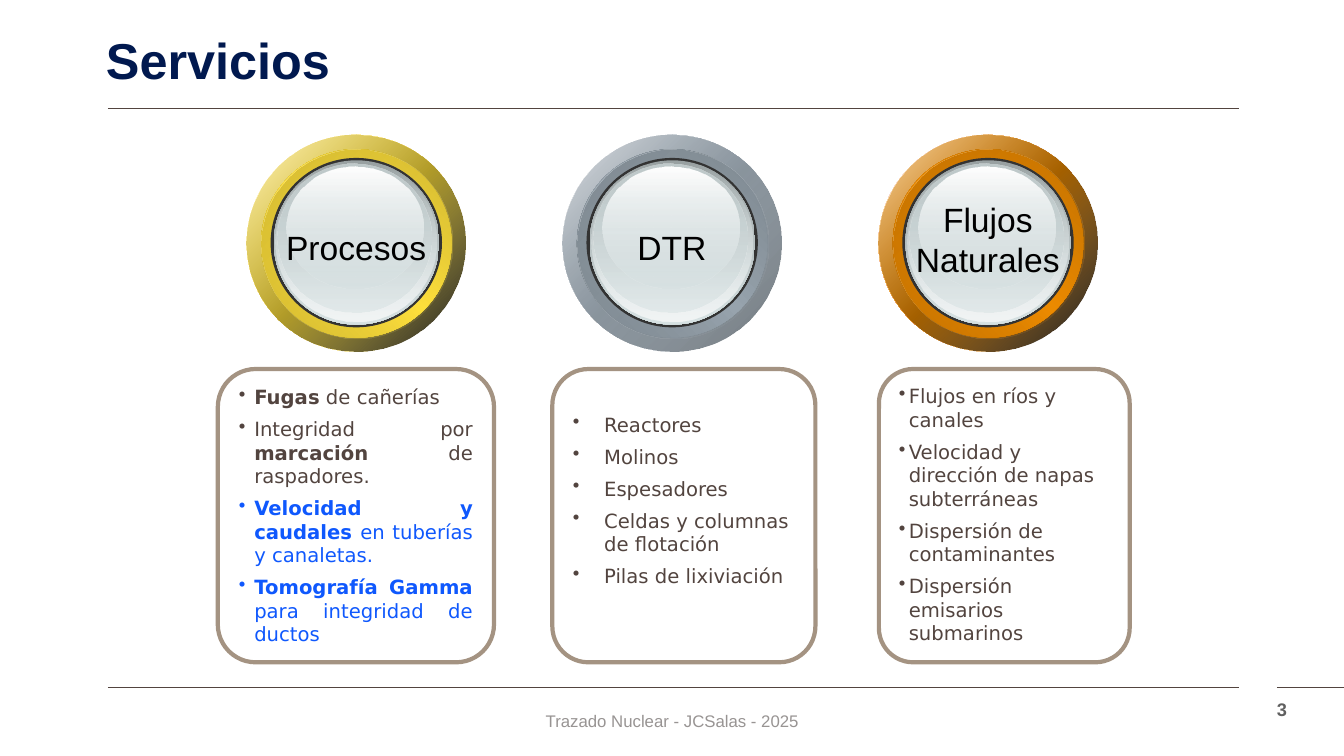
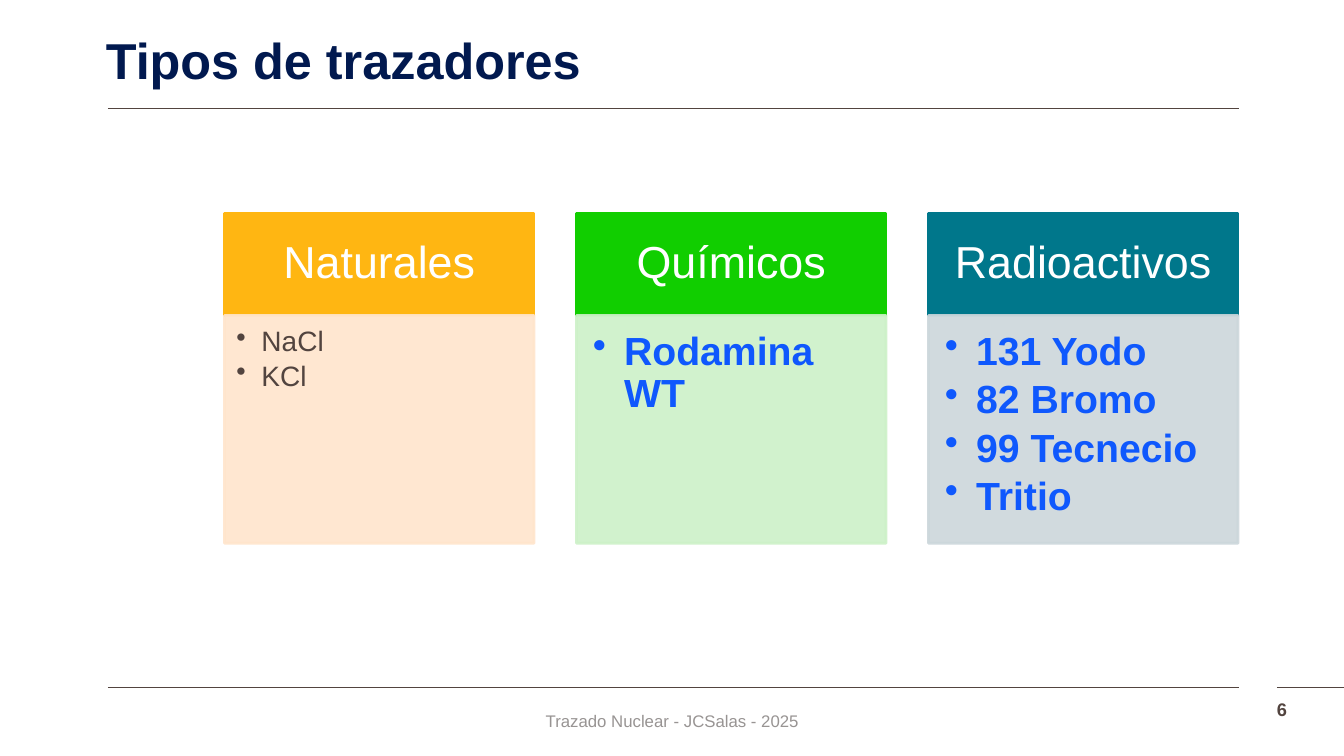
from typing import NamedTuple

from lxml import etree
from pptx import Presentation
from pptx.dml.color import RGBColor
from pptx.enum.shapes import MSO_CONNECTOR, MSO_SHAPE
from pptx.enum.text import MSO_ANCHOR, MSO_AUTO_SIZE, PP_ALIGN
from pptx.oxml.ns import qn
from pptx.util import Cm, Pt

STRAIGHT = MSO_CONNECTOR.STRAIGHT
ELLIPSE, RECTANGLE = MSO_SHAPE.OVAL, MSO_SHAPE.RECTANGLE
ROUNDED = MSO_SHAPE.ROUNDED_RECTANGLE
LEFT, CENTER, JUSTIFY = PP_ALIGN.LEFT, PP_ALIGN.CENTER, PP_ALIGN.JUSTIFY
TOP, MIDDLE = MSO_ANCHOR.TOP, MSO_ANCHOR.MIDDLE

NAVY = RGBColor(0x01, 0x19, 0x4F)
BROWN = RGBColor(0x52, 0x44, 0x3F)
GRAY = RGBColor(0x60, 0x60, 0x60)
FOOTER_GRAY = RGBColor(0x98, 0x94, 0x93)
BLUE = RGBColor(0x0F, 0x58, 0xFD)
TAUPE = RGBColor(0xA4, 0x93, 0x82)
CHARCOAL = RGBColor(0x33, 0x33, 0x33)
BLACK = RGBColor(0, 0, 0)
WHITE = RGBColor(0xFF, 0xFF, 0xFF)
AMBER, PEACH = RGBColor(0xFF, 0xB6, 0x12), RGBColor(0xFF, 0xE5, 0xCC)
GREEN, MINT = RGBColor(0x11, 0xCE, 0x00), RGBColor(0xCD, 0xF1, 0xC8)
TEAL, MIST = RGBColor(0x00, 0x77, 0x8B), RGBColor(0xCC, 0xD7, 0xDB)
GLASS = RGBColor(0xD6, 0xE1, 0xE2)
GLASS_EDGE = RGBColor(0x99, 0xA1, 0xA2)
GLASS_GLOW = RGBColor(0xF2, 0xF5, 0xF5)
GLASS_SHADE = RGBColor(0xC1, 0xCB, 0xCC)

SANS, LIST_FONT = "Arial", "DejaVu Sans"
NO_INSETS = (0, 0, 0, 0)
DEFAULT_INSETS = (0.25, 0.13, 0.25, 0.13)


class Metal(NamedTuple):
    base: RGBColor
    edge: RGBColor
    inner: RGBColor
    shadow: RGBColor
    shadow_alpha: int


GOLD = Metal(RGBColor(0xFF, 0xE0, 0x3C), RGBColor(0xC3, 0xAC, 0x2E),
             RGBColor(0xD1, 0xB8, 0x31), BLACK, 90)
SILVER = Metal(RGBColor(0x98, 0xA4, 0xAE), RGBColor(0x74, 0x7E, 0x85),
               RGBColor(0x7D, 0x87, 0x8F), RGBColor(0x6D, 0x75, 0x7C), 100)
BRONZE = Metal(RGBColor(0xED, 0x8B, 0x00), RGBColor(0xB5, 0x6A, 0x00),
               RGBColor(0xC3, 0x72, 0x00), BLACK, 90)


class TextStyle(NamedTuple):
    size: float
    color: RGBColor
    font: str = SANS
    bold: bool = False
    indent: float = 0
    format: dict = {}


TITLE = TextStyle(36, NAVY, bold=True,
                  format={"alignment": LEFT, "line_spacing": 0.9})
FOOTER = TextStyle(12, FOOTER_GRAY, format={"alignment": CENTER})
RING_LABEL = TextStyle(24, BLACK, format={"alignment": CENTER})
CARD_HEADER = TextStyle(32, WHITE,
                        format={"alignment": CENTER, "line_spacing": 0.9})


def service_style(indent, alignment=LEFT):
    return TextStyle(14, BROWN, LIST_FONT, indent=indent,
                     format={"alignment": alignment, "space_after": Pt(6)})


def card_style(size, color, bold, indent):
    return TextStyle(size, color, bold=bold, indent=indent,
                     format={"alignment": LEFT, "line_spacing": 0.9,
                             "space_after": Pt(size * 0.15)})


def add_bullet(paragraph, indent):
    properties = paragraph._p.get_or_add_pPr()
    properties.set("marL", str(Cm(indent)))
    properties.set("indent", str(-Cm(indent)))
    etree.SubElement(properties, qn("a:buChar")).set("char", "•")


def write_text(frame, paragraphs, style, anchor=TOP, insets=DEFAULT_INSETS):
    """Write paragraphs given as strings or as lists of (text, bold, color)."""
    sides = ("margin_left", "margin_top", "margin_right", "margin_bottom")
    for side, inset in zip(sides, insets):
        setattr(frame, side, Cm(inset))
    frame.word_wrap = True
    frame.auto_size = MSO_AUTO_SIZE.NONE
    frame.vertical_anchor = anchor
    for index, content in enumerate(paragraphs):
        paragraph = frame.add_paragraph() if index else frame.paragraphs[0]
        if style.indent:
            add_bullet(paragraph, style.indent)
        for name, value in style.format.items():
            setattr(paragraph, name, value)
        if isinstance(content, str):
            content = [(content, style.bold, style.color)]
        for text, bold, color in content:
            run = paragraph.add_run()
            run.text = text
            values = {"name": style.font, "size": Pt(style.size), "bold": bold}
            for name, value in values.items():
                setattr(run.font, name, value)
            run.font.color.rgb = color


def add_text(slide, box, paragraphs, style, **layout):
    text_box = slide.shapes.add_textbox(*map(Cm, box))
    write_text(text_box.text_frame, paragraphs, style, **layout)
    return text_box


def add_panel(slide, kind, box, fill=None, line=None, line_width=0):
    shape = slide.shapes.add_shape(kind, *map(Cm, box))
    shape.shadow.inherit = False
    if fill is None:
        shape.fill.background()
    else:
        shape.fill.solid()
        shape.fill.fore_color.rgb = fill
    if line is None:
        shape.line.fill.background()
    else:
        shape.line.color.rgb = line
        shape.line.width = Pt(line_width)
    return shape


def set_alpha(color_element, percent):
    alpha = etree.SubElement(color_element, qn("a:alpha"))
    alpha.set("val", str(percent * 1000))


def set_gradient(shape, stops, angle):
    """Fill with (color, opacity) stops at equal steps, angle clockwise."""
    shape.fill.gradient()
    shape.fill.gradient_angle = (360 - angle) % 360
    stop_list = next(shape.element.spPr.iter(qn("a:gsLst")))
    for stop in list(stop_list):
        stop_list.remove(stop)
    for index, (color, opacity) in enumerate(stops):
        stop = etree.SubElement(stop_list, qn("a:gs"))
        stop.set("pos", str(100000 * index // (len(stops) - 1)))
        color_element = etree.SubElement(stop, qn("a:srgbClr"))
        color_element.set("val", str(color))
        if opacity < 100:
            set_alpha(color_element, opacity)


def add_rule(slide, start, end, top):
    rule = slide.shapes.add_connector(
        STRAIGHT, Cm(start), Cm(top), Cm(end), Cm(top))
    rule.line.color.rgb = BROWN
    rule.line.width = Pt(0.5)
    etree.SubElement(rule.element.spPr, qn("a:effectLst"))
    return rule


def style_layout(layout, slide):
    """Draw the rules and the footer on a slide and move them to its layout."""
    for placeholder in list(layout.placeholders):
        if placeholder.placeholder_format.idx:
            layout.shapes.element.remove(placeholder.element)
        else:
            box = {"left": 2.67, "top": 0.91, "width": 26.52, "height": 1.47}
            for name, value in box.items():
                setattr(placeholder, name, Cm(value))
    shared = [add_rule(slide, 32.18, 33.87, 17.32),
              add_rule(slide, 2.72, 31.22, 2.74),
              add_rule(slide, 2.72, 31.22, 17.32),
              add_text(slide, (11.23, 17.65, 11.43, 1.02),
                       ["Trazado Nuclear - JCSalas - 2025"], FOOTER,
                       anchor=MIDDLE)]
    for shape in shared:
        layout.shapes.element.append(shape.element)


def add_title_and_number(slide, title, number, number_color):
    write_text(slide.shapes.title.text_frame, [title], TITLE, insets=NO_INSETS)
    add_text(slide, (32.18, 17.6, 1.68, 1.02), [number],
             TextStyle(13, number_color, bold=True), insets=NO_INSETS)


def add_ring(slide, left, metal, label, label_top):
    top, width = 3.4, 5.51
    solid_base = (metal.base, 100)
    edge = (metal.edge, 100)
    white = (WHITE, 100)
    layers = [
        ((0, 0, width, 5.46), [white, solid_base, white], 45),
        ((0, 0, width, 5.46),
         [(metal.base, 32), (metal.shadow, metal.shadow_alpha)], 45),
        ((0.36, 0.36, 4.8, 4.75), [edge, solid_base, edge], 315),
        ((0.38, 0.37, 4.8, 4.75), [(metal.inner, 100), (metal.base, 0)], 45),
        ((0.6, 0.58, 4.32, 4.27), None, 0),
        ((0.68, 0.64, 4.17, 4.14), [(GLASS_EDGE, 100), (GLASS, 100)], 90),
        ((0.73, 0.66, 4.06, 4.04), [(GLASS, 0), (GLASS_GLOW, 100)], 90),
        ((0.77, 0.71, 3.89, 3.76), [(GLASS_SHADE, 100), (GLASS, 48)], 90),
        ((1, 0.81, 3.45, 3.05), [white, (GLASS, 38)], 90),
    ]
    for (x, y, layer_width, layer_height), stops, angle in layers:
        disc = add_panel(slide, ELLIPSE,
                         (left + x, top + y, layer_width, layer_height),
                         CHARCOAL)
        if stops:
            set_gradient(disc, stops, angle)
    add_text(slide, (left, label_top, width, 1.27), label, RING_LABEL)


def add_service_box(slide, left, width, items, style, **layout):
    box = add_panel(slide, ROUNDED, (left, 9.3, width, 7.39),
                    line=TAUPE, line_width=3)
    box.adjustments[0] = 0.137
    write_text(box.text_frame, items, style, **layout)


def add_card(slide, left, title, items, style, insets, colors):
    header_color, body_color = colors
    width = 7.8
    header = add_panel(slide, RECTANGLE, (left, 5.38, width, 2.57),
                       header_color, header_color, 2)
    write_text(header.text_frame, [title], CARD_HEADER, MIDDLE,
               (0.63, 0.36, 0.63, 0.36))
    body = add_panel(slide, RECTANGLE, (left, 7.95, width, 5.74),
                     body_color, body_color, 2)
    for color_element in body.element.spPr.iter(qn("a:srgbClr")):
        set_alpha(color_element, 90)
    write_text(body.text_frame, items, style, insets=insets)


def fill_services(slide):
    add_title_and_number(slide, "Servicios", "3", GRAY)
    process_items = [
        [("Fugas", True, BROWN), (" de cañerías", False, BROWN)],
        [("Integridad por ", False, BROWN), ("marcación", True, BROWN),
         (" de raspadores.", False, BROWN)],
        [("Velocidad y caudales ", True, BLUE),
         ("en tuberías y canaletas.", False, BLUE)],
        [("Tomografía Gamma ", True, BLUE),
         ("para integridad de ductos", False, BLUE)],
    ]
    add_service_box(slide, 5.49, 6.96, process_items,
                    service_style(0.39, JUSTIFY))
    add_service_box(slide, 13.92, 6.63,
                    ["Reactores", "Molinos", "Espesadores",
                     "Celdas y columnas de flotación", "Pilas de lixiviación"],
                    service_style(0.79), anchor=MIDDLE,
                    insets=(0.25, 0.13, 0.25, 0.92))
    add_service_box(slide, 22.15, 6.32,
                    ["Flujos en ríos y canales",
                     "Velocidad y dirección de napas subterráneas",
                     "Dispersión de contaminantes",
                     "Dispersión emisarios submarinos"],
                    service_style(0.25))
    rings = [(GOLD, ["Procesos"], 5.59), (SILVER, ["DTR"], 5.59),
             (BRONZE, ["Flujos", "Naturales"], 4.88)]
    for index, (metal, label, label_top) in enumerate(rings):
        add_ring(slide, 6.22 + 7.96 * index, metal, label, label_top)


def fill_tracers(slide):
    add_title_and_number(slide, "Tipos de trazadores", "6", BROWN)
    plain = card_style(20, BROWN, False, 0.63), (0.3, 0.3, 0.41, 0.43)
    strong = card_style(28, BLUE, True, 0.79), (0.41, 0.41, 0.56, 0.61)
    cards = [
        ("Naturales", ["NaCl", "KCl"], *plain, (AMBER, PEACH)),
        ("Químicos", ["Rodamina WT"], *strong, (GREEN, MINT)),
        ("Radioactivos", ["131 Yodo", "82 Bromo", "99 Tecnecio", "Tritio"],
         *strong, (TEAL, MIST)),
    ]
    for index, card in enumerate(cards):
        add_card(slide, 5.66 + 8.87 * index, *card)


def main():
    presentation = Presentation()
    presentation.slide_width, presentation.slide_height = Cm(33.87), Cm(19.05)
    layout = presentation.slide_layouts.get_by_name("Title Only")
    services, tracers = (presentation.slides.add_slide(layout)
                         for _ in range(2))
    style_layout(layout, services)
    fill_services(services)
    fill_tracers(tracers)
    presentation.save("out.pptx")


if __name__ == "__main__":
    main()
